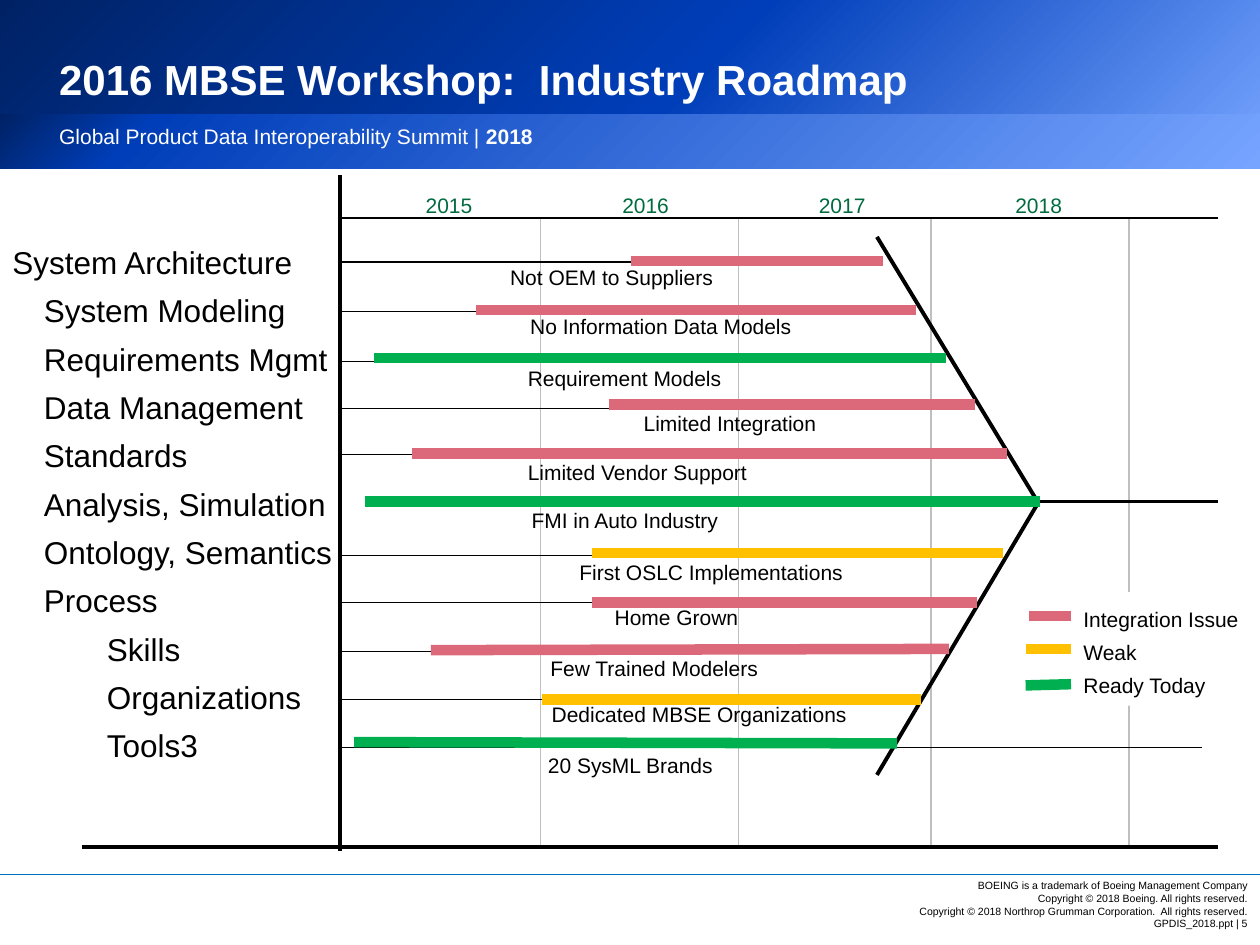
from copy import deepcopy
from lxml import etree
from pptx import Presentation
from pptx.dml.color import RGBColor
from pptx.enum import shapes, text
from pptx.oxml.ns import qn
from pptx.util import Inches, Pt


class Theme:
    font = "Arial"
    black, white = "000000", "FFFFFF"
    year, grid, rule = "006B3F", "BFBFBF", "0070C0"
    issue, weak, ready = "DC6979", "FFC000", "00B050"
    light, blue, navy = "76A4FF", "003EB9", "002265"
    title, topic, body, footer = 24, 18, 12, 6
    thin, heavy, bar = 0.75, 2.25, 6


TITLE = "2016 MBSE Workshop:  Industry Roadmap"
SUBTITLE = [("Global Product Data Interoperability Summit | ", False), ("2018", True)]
FOOTER = [
    "BOEING is a trademark of Boeing Management Company",
    "Copyright © 2018 Boeing. All rights reserved.",
    "Copyright © 2018 Northrop Grumman Corporation.  All rights reserved.",
    "GPDIS_2018.ppt | 5",
]
YEARS = ["2015", "2016", "2017", "2018"]
YEAR_LINES = [4.29, 5.86, 7.39, 8.96]
BANDS = [(0, 1.32, 46), (0.91, 0.43, 88)]
TOPICS = [
    ("System Architecture", 0), ("System Modeling", 1), ("Requirements Mgmt", 1),
    ("Data Management", 1), ("Standards", 1), ("Analysis, Simulation", 1),
    ("Ontology, Semantics", 1), ("Process", 1), ("Skills", 2),
    ("Organizations", 2), ("Tools3", 2),
]
LEVEL_INDENTS = [0, 0.25, 0.75]
AXIS_X, AXIS_Y, RIGHT = 2.7, 6.72, 9.67
TIP = (8.24, 3.99)
FRAME_LINES = [
    ((0.65, AXIS_Y), (RIGHT, AXIS_Y)),
    ((AXIS_X, 1.39), (AXIS_X, 6.75)),
    ((3.77, 3.98), (RIGHT, 3.98)),
    ((6.96, 6.15), TIP),
    ((6.96, 1.88), TIP),
]
GUIDES = [
    (2.08, 6.1), (2.47, 6.1), (2.87, 6.1), (3.24, 6.1), (3.61, 6.1),
    (4.41, 6.1), (4.78, 6.64), (5.17, 6.49), (5.55, 6.26), (5.93, 9.54),
]
BARS = [
    ((5.01, 2.07), (7.01, 2.07), Theme.issue, "Not OEM to Suppliers", 3.95, 2.05),
    ((3.78, 2.46), (7.27, 2.46), Theme.issue, "No Information Data Models", 4.11, 2.44),
    ((2.97, 2.84), (7.51, 2.84), Theme.ready, "Requirement Models", 4.09, 2.85),
    ((4.83, 3.21), (7.74, 3.21), Theme.issue, "Limited Integration", 5.01, 3.21),
    ((3.27, 3.6), (7.99, 3.6), Theme.issue, "Limited Vendor Support", 4.09, 3.6),
    ((2.9, 3.98), (8.25, 3.98), Theme.ready, "FMI in Auto Industry", 4.12, 3.98),
    ((4.7, 4.39), (7.96, 4.39), Theme.weak, "First OSLC Implementations", 4.5, 4.39),
    ((4.7, 4.78), (7.75, 4.78), Theme.issue, "Home Grown", 4.78, 4.75),
    ((3.42, 5.16), (7.53, 5.15), Theme.issue, "Few Trained Modelers", 4.27, 5.15),
    ((4.3, 5.55), (7.31, 5.55), Theme.weak, "Dedicated MBSE Organizations", 4.28, 5.52),
    ((2.81, 5.89), (7.12, 5.9), Theme.ready, "20 SysML Brands", 4.25, 5.92),
]
LEGEND = [
    ("Integration Issue", Theme.issue, (8.17, 4.89), (8.5, 4.89)),
    ("Weak", Theme.weak, (8.14, 5.15), (8.5, 5.15)),
    ("Ready Today", Theme.ready, (8.14, 5.44), (8.5, 5.43)),
]


def rgb(color):
    return RGBColor.from_string(color)


def add_line(slide, start, end, color=Theme.black, width=Theme.thin):
    line = slide.shapes.add_connector(
        shapes.MSO_CONNECTOR.STRAIGHT, *[Inches(v) for v in (*start, *end)])
    line.line.color.rgb = rgb(color)
    line.line.width = Pt(width)
    etree.SubElement(line._element.spPr, qn("a:effectLst"))
    return line


def add_rectangle(slide, box):
    shape = slide.shapes.add_shape(
        shapes.MSO_SHAPE.RECTANGLE, *[Inches(v) for v in box])
    shape.shadow.inherit = False
    shape.line.fill.background()
    return shape


def add_band(slide, top, height, middle):
    fill = add_rectangle(slide, (0, top, 10, height)).fill
    fill.gradient()
    fill.gradient_angle = 135
    stop_list = fill._xPr.find(qn("a:gradFill")).find(qn("a:gsLst"))
    stop_list.append(deepcopy(stop_list[-1]))
    colors = (Theme.light, Theme.blue, Theme.navy)
    for stop, position, color in zip(fill.gradient_stops, (0, middle, 100), colors):
        stop.position = position / 100
        stop.color.rgb = rgb(color)


def write(shape, paragraphs, size=Theme.body, color=Theme.black, bold=False,
          insets=(0.1, 0.05, 0.1, 0.05), align=text.PP_ALIGN.LEFT,
          anchor=text.MSO_ANCHOR.TOP, line_spacing=None, gap=0, levels=None):
    frame = shape.text_frame
    frame.word_wrap = True
    frame.auto_size = text.MSO_AUTO_SIZE.SHAPE_TO_FIT_TEXT
    frame.vertical_anchor = anchor
    frame.margin_left, frame.margin_top, frame.margin_right, frame.margin_bottom = [
        Inches(v) for v in insets]
    for index, content in enumerate(paragraphs):
        paragraph = frame.add_paragraph() if index else frame.paragraphs[0]
        paragraph.alignment = align
        if line_spacing:
            paragraph.line_spacing = Pt(line_spacing)
        if index and gap:
            paragraph.space_before = Pt(gap)
        if levels:
            paragraph.level = levels[index]
            properties = paragraph._p.get_or_add_pPr()
            properties.set("marL", str(Inches(LEVEL_INDENTS[levels[index]])))
            properties.set("indent", "0")
        runs = [(content, bold)] if isinstance(content, str) else content
        for words, is_bold in runs:
            run = paragraph.add_run()
            run.text = words
            run.font.name = Theme.font
            run.font.size = Pt(size)
            run.font.bold = is_bold
            run.font.color.rgb = rgb(color)


def add_text(slide, box, paragraphs, **style):
    write(slide.shapes.add_textbox(*[Inches(v) for v in box]), paragraphs, **style)


def add_header_and_footer(slide):
    for band in BANDS:
        add_band(slide, *band)
    add_text(slide, (0, 0.93, 10, 0.3), [SUBTITLE], color=Theme.white,
             insets=(0.47, 0.05, 0.5, 0.05))
    add_text(slide, (0, 0.21, 10, 0.62), [TITLE], size=Theme.title, color=Theme.white,
             bold=True, insets=(0.47, 0.25, 0.5, 0), anchor=text.MSO_ANCHOR.MIDDLE,
             line_spacing=26)
    add_text(slide, (6.97, 6.93, 3.03, 0.5), FOOTER, size=Theme.footer,
             align=text.PP_ALIGN.RIGHT)
    add_line(slide, (0, 6.94), (10, 6.94), Theme.rule, 0.5)


def add_roadmap(slide):
    flush_right = (0.1, 0.05, 0, 0.05)
    for x in YEAR_LINES:
        add_line(slide, (x, 1.72), (x, AXIS_Y), Theme.grid)
    add_line(slide, (AXIS_X, 1.73), (RIGHT, 1.73))
    for index, year in enumerate(YEARS):
        add_text(slide, (3.28 + 1.56 * index, 1.48, 0.55, 0.3), [year],
                 color=Theme.year, insets=flush_right)
    names, levels = zip(*TOPICS)
    add_text(slide, (0, 1.88, 2.73, 4.27), names, size=Theme.topic,
             insets=flush_right, gap=6, levels=levels)
    for start, end in FRAME_LINES:
        add_line(slide, start, end, width=Theme.heavy)
    for y, end_x in GUIDES:
        add_line(slide, (AXIS_X, y), (end_x, y))
    for start, end, color, label, x, y in BARS:
        add_line(slide, start, end, color, Theme.bar)
        add_text(slide, (x, y, 2.68, 0.3), [label])


def add_legend(slide):
    panel = add_rectangle(slide, (8.5, 4.7, 1.45, 0.9))
    panel.fill.solid()
    panel.fill.fore_color.rgb = rgb(Theme.white)
    write(panel, [entry[0] for entry in LEGEND], line_spacing=19)
    for name, color, start, end in LEGEND:
        key = add_line(slide, start, end, color, Theme.bar)
        if name == "Weak":
            key.end_connect(panel, 1)


def main():
    presentation = Presentation()
    presentation.slide_width, presentation.slide_height = Inches(10), Inches(7.5)
    slide = presentation.slides.add_slide(presentation.slide_layouts[6])
    add_header_and_footer(slide)
    add_roadmap(slide)
    add_legend(slide)
    presentation.save("out.pptx")


if __name__ == "__main__":
    main()
